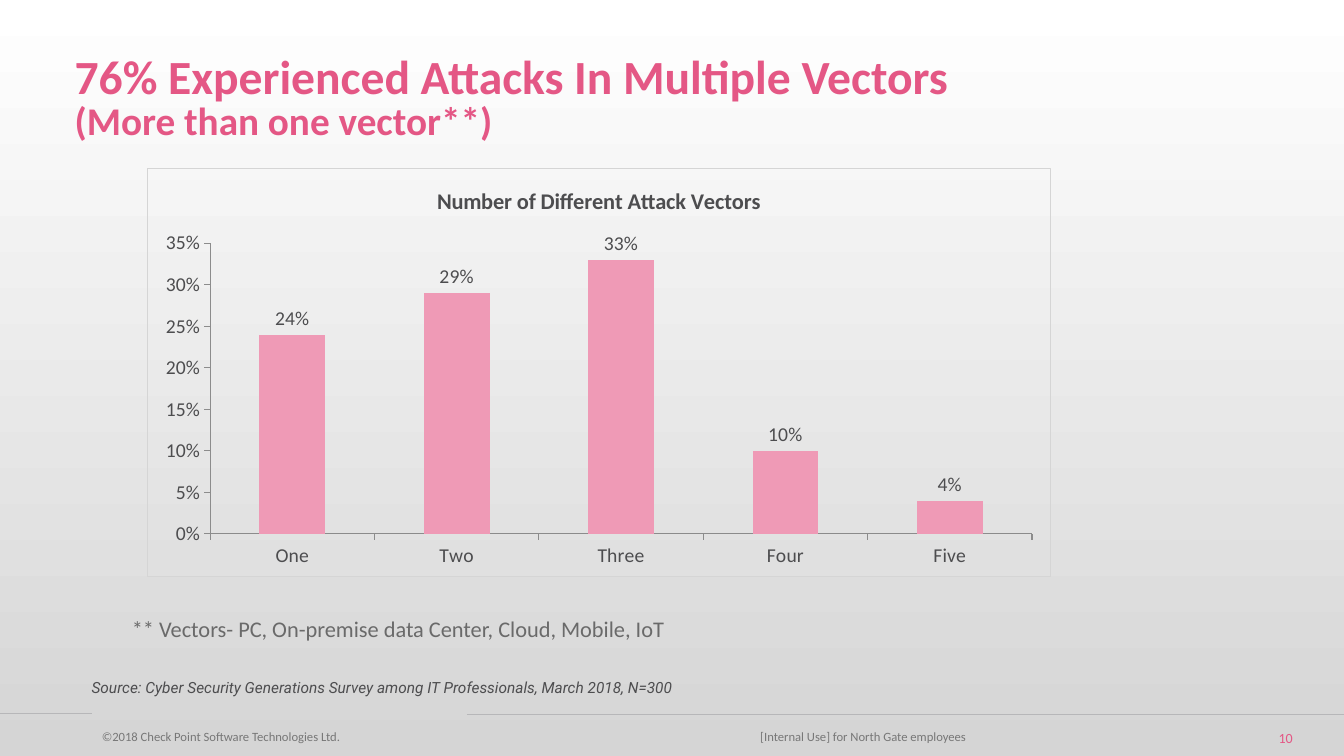
import pptx
import pptx.chart.data
import pptx.dml.color
import pptx.enum.chart
import pptx.enum.shapes
import pptx.enum.text
import pptx.oxml
import pptx.oxml.ns
import pptx.util

Inches = pptx.util.Inches
Pt = pptx.util.Pt
RGBColor = pptx.dml.color.RGBColor
Align = pptx.enum.text.PP_ALIGN
Anchor = pptx.enum.text.MSO_ANCHOR

PINK = RGBColor(0xE4, 0x57, 0x85)
ROSE = RGBColor(0xEF, 0x9A, 0xB6)
DARK = RGBColor(0x4D, 0x4D, 0x4F)
GRAY = RGBColor(0x6A, 0x6A, 0x6A)
DIM = RGBColor(0x77, 0x77, 0x77)
RULE = RGBColor(0xB7, 0xB7, 0xB9)
AXIS = RGBColor(0x8C, 0x8C, 0x8C)
PALE = RGBColor(0xD5, 0xD5, 0xD5)
WHITE = RGBColor(0xFF, 0xFF, 0xFF)


class Deck:
    """Hold the style and the current slide, and draw each kind of element."""

    font = "Calibri"

    def __init__(self, wide, high):
        self.show = pptx.Presentation()
        self.show.slide_width = Inches(wide)
        self.show.slide_height = Inches(high)
        self.slide = self.show.slides.add_slide(self.show.slide_layouts[5])

    def shade(self, low, top):
        fill = self.slide.background.fill
        fill.gradient()
        fill.gradient_angle = 90
        for stop, color, place in zip(fill.gradient_stops, (low, top), (0, 1)):
            stop.color.rgb = color
            stop.position = place

    def style(self, font, size, color, bold=False, slant=False, face=None):
        font.name = face or self.font
        font.size = Pt(size)
        font.color.rgb = color
        font.bold = bold
        font.italic = slant

    def title(self, box, lines):
        shape = self.slide.shapes.title
        shape.left, shape.top, shape.width, shape.height = map(Inches, box)
        frame = shape.text_frame
        frame.auto_size = pptx.enum.text.MSO_AUTO_SIZE.NONE
        frame.vertical_anchor = Anchor.TOP
        para = frame.paragraphs[0]
        para.alignment = Align.LEFT
        para.line_spacing = 0.85
        for spot, (text, size) in enumerate(lines):
            if spot:
                para.add_line_break()
            run = para.add_run()
            run.text = text
            self.style(run.font, size, PINK, bold=True)

    def text(self, box, words, size, color, align=Align.LEFT, anchor=Anchor.MIDDLE,
             pad=(0.1, 0.05), wrap=True, **look):
        frame = self.slide.shapes.add_textbox(*map(Inches, box)).text_frame
        frame.word_wrap = wrap
        frame.vertical_anchor = anchor
        frame.margin_left = frame.margin_right = Inches(pad[0])
        frame.margin_top = frame.margin_bottom = Inches(pad[1])
        para = frame.paragraphs[0]
        para.alignment = align
        run = para.add_run()
        run.text = words
        self.style(run.font, size, color, **look)

    def foot(self, box, words, size, color, align):
        self.text(box, words, size, color, align, pad=(0.13, 0.07))

    def line(self, left, right, y):
        kind = pptx.enum.shapes.MSO_CONNECTOR.STRAIGHT
        rule = self.slide.shapes.add_connector(
            kind, Inches(left), Inches(y), Inches(right), Inches(y))
        rule.line.color.rgb = RULE
        rule.line.width = Pt(0.75)
        props = rule._element.spPr
        props.append(pptx.oxml.parse_xml(
            f"<a:effectLst {pptx.oxml.ns.nsdecls('a')}/>"))

    def chart(self, box, head, pairs):
        enum = pptx.enum.chart
        data = pptx.chart.data.CategoryChartData(number_format="0%")
        data.categories = [name for name, share in pairs]
        data.add_series("Series 1", [share for name, share in pairs])
        chart = self.slide.shapes.add_chart(
            enum.XL_CHART_TYPE.COLUMN_CLUSTERED, *map(Inches, box), data).chart
        self.style(chart.font, 14, DARK)
        chart.has_legend = False
        chart.has_title = True
        run = chart.chart_title.text_frame.paragraphs[0].add_run()
        run.text = head
        self.style(run.font, 16, DARK, bold=True)
        for axis in (chart.category_axis, chart.value_axis):
            axis.has_major_gridlines = False
            axis.major_tick_mark = enum.XL_TICK_MARK.OUTSIDE
            axis.minor_tick_mark = enum.XL_TICK_MARK.NONE
            axis.format.line.color.rgb = AXIS
            axis.format.line.width = Pt(0.75)
            self.style(axis.tick_labels.font, 14, DARK)
        scale = chart.value_axis
        scale.minimum_scale, scale.maximum_scale, scale.major_unit = 0, 0.35, 0.05
        scale.tick_labels.number_format = "0%"
        scale.tick_labels.number_format_is_linked = False
        plot = chart.plots[0]
        plot.gap_width = 150
        plot.vary_by_categories = False
        bars = plot.series[0]
        bars.format.fill.solid()
        bars.format.fill.fore_color.rgb = ROSE
        tags = bars.data_labels
        tags.show_value = True
        tags.number_format = "0%"
        tags.number_format_is_linked = False
        tags.position = enum.XL_LABEL_POSITION.OUTSIDE_END
        self.style(tags.font, 14, DARK)
        self.frame(chart)

    def frame(self, chart):
        names = pptx.oxml.ns.nsdecls("c", "a")
        edge = pptx.oxml.parse_xml(
            f'<c:spPr {names}><a:noFill/><a:ln w="{Pt(0.75)}"><a:solidFill>'
            f'<a:srgbClr val="{PALE}"/></a:solidFill></a:ln></c:spPr>')
        chart._chartSpace.find(pptx.oxml.ns.qn("c:txPr")).addprevious(edge)


def main():
    deck = Deck(13.33, 7.5)
    deck.shade(PALE, WHITE)
    deck.line(0, 0.91, 7.08)
    deck.line(4.63, 13.33, 7.09)
    deck.title((0.64, 0.5, 10.78, 1.01), [
        ("76% Experienced Attacks In Multiple Vectors", 34),
        ("(More than one vector**)", 28)])
    deck.chart((1.46, 1.67, 8.96, 4.05), "Number of Different Attack Vectors", [
        ("One", 0.24), ("Two", 0.29), ("Three", 0.33), ("Four", 0.1), ("Five", 0.04)])
    deck.text((1.21, 6.05, 5.64, 0.37),
              "** Vectors- PC, On-premise data Center, Cloud, Mobile, IoT",
              16, GRAY, wrap=False)
    deck.text((0.81, 6.68, 8.28, 0.29),
              "Source: Cyber Security Generations Survey among IT Professionals, "
              "March 2018, N=300",
              11, DARK, anchor=Anchor.TOP, slant=True, face="Roboto")
    deck.foot((0.88, 7.14, 3, 0.33), "©2018 Check Point Software Technologies Ltd.",
              9, DIM, Align.LEFT)
    deck.foot((6.48, 7.14, 4.16, 0.33), "[Internal Use] for North Gate employees",
              9, DIM, Align.CENTER)
    deck.foot((10.94, 7.17, 2.01, 0.3), "10", 10, PINK, Align.RIGHT)
    deck.show.save("out.pptx")


if __name__ == "__main__":
    main()
